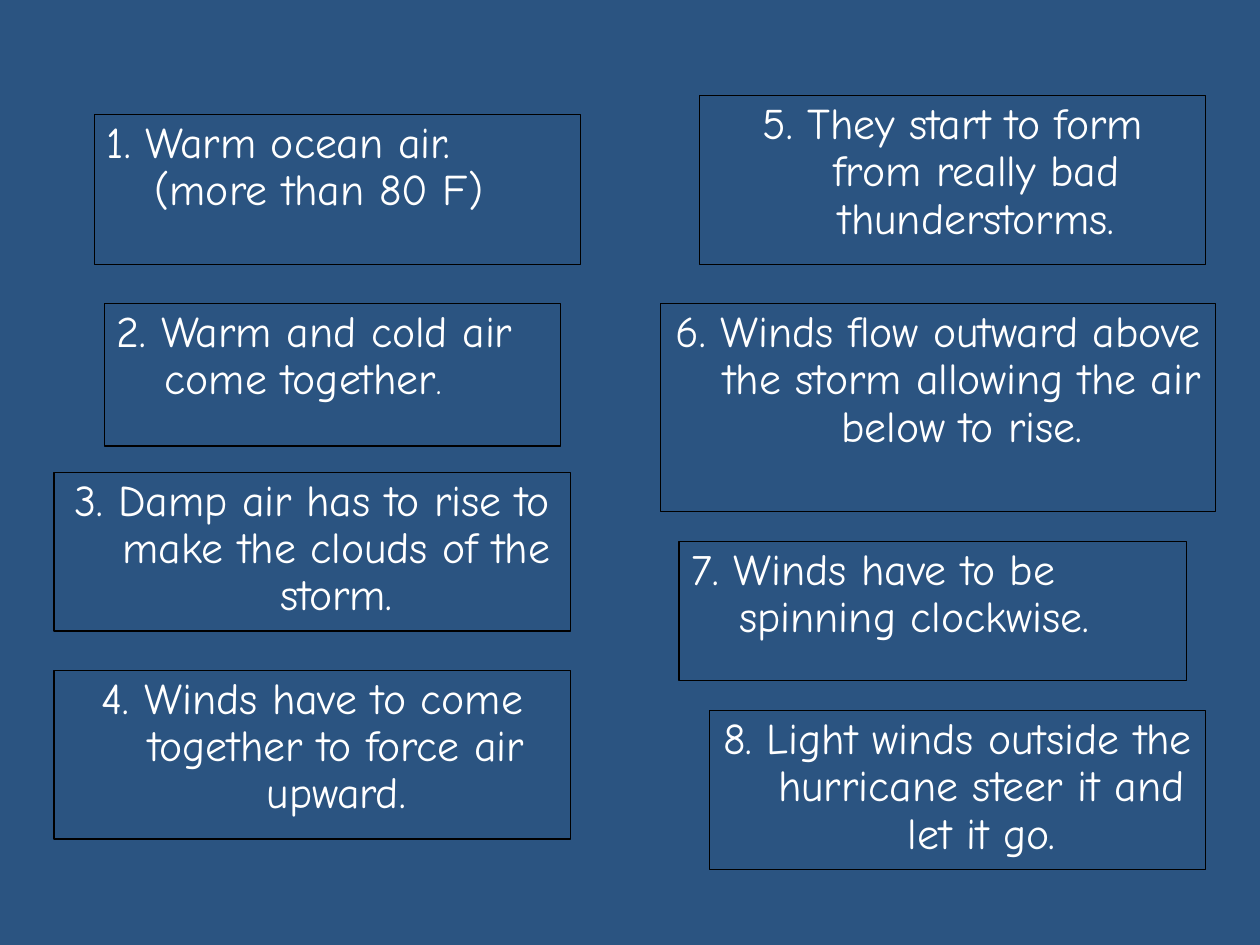
from dataclasses import dataclass

from pptx import Presentation, util as u
from pptx.dml.color import RGBColor
from pptx.enum import shapes, text

WIDTH, HEIGHT = u.Inches(10), u.Inches(7.5)
COLS, ROWS = 100, 75
FONT, SIZE = "Comic Neue", 25
HANG = u.Inches(0.38)
LEFT, CENTER = text.PP_ALIGN.LEFT, text.PP_ALIGN.CENTER


@dataclass
class Fact:
    """A numbered box, placed in grid columns and rows."""
    words: str
    col: float
    row: float
    cols: float
    rows: float
    align: text.PP_ALIGN = CENTER
    small_end: str = ""


FACTS = [
    Fact("Warm ocean air. (more than 80 F)", 7.5, 9.1, 38.6, 11.9, LEFT),
    Fact("Warm and cold air come together", 8.3, 24.1, 36.2, 11.3, LEFT, "."),
    Fact("Damp air has to rise to make the clouds of the storm.", 4.3, 37.5, 41, 12.6),
    Fact("Winds have to come together to force air upward.", 4.3, 53.2, 41, 13.4),
    Fact("They start to form from really bad thunderstorms.", 55.5, 7.6, 40.2, 13.4),
    Fact("Winds flow outward above the storm allowing the air below to rise.",
         52.4, 24.1, 44.1, 16.5),
    Fact("Winds have to be spinning clockwise.", 53.9, 43, 40.3, 11, LEFT),
    Fact("Light winds outside the hurricane steer it and let it go.", 56.3, 56.4, 39.4, 12.6),
]


def rgb(color: str) -> RGBColor:
    return RGBColor.from_string(color)


def add_run(p, words: str, *, size: float = SIZE, color: str = "FFFFFF") -> None:
    r = p.add_run()
    r.text = words
    r.font.name, r.font.size = FONT, u.Pt(size)
    r.font.color.rgb = rgb(color)


def draw_fact(s, number: int, fact: Fact) -> None:
    sp = s.shapes.add_shape(
        shapes.MSO_SHAPE.RECTANGLE,
        round(WIDTH * fact.col / COLS), round(HEIGHT * fact.row / ROWS),
        round(WIDTH * fact.cols / COLS), round(HEIGHT * fact.rows / ROWS))
    sp.shadow.inherit = False
    sp.fill.background()
    sp.line.color.rgb = rgb("000000")
    sp.line.width = u.Pt(0.75)
    tf = sp.text_frame
    tf.word_wrap = True
    tf.vertical_anchor = text.MSO_ANCHOR.TOP
    p = tf.paragraphs[0]
    p.alignment, p.line_spacing = fact.align, 0.9
    ppr = p._p.get_or_add_pPr()
    ppr.set("marL", str(HANG))
    ppr.set("indent", str(-HANG))
    add_run(p, f"{number}. {fact.words}")
    if fact.small_end:
        add_run(p, fact.small_end, size=20)


def main() -> None:
    prs = Presentation()
    prs.slide_width, prs.slide_height = WIDTH, HEIGHT
    s = prs.slides.add_slide(prs.slide_layouts[6])
    s.background.fill.solid()
    s.background.fill.fore_color.rgb = rgb("2B5481")
    for number, fact in enumerate(FACTS, 1):
        draw_fact(s, number, fact)
    prs.save("out.pptx")


if __name__ == "__main__":
    main()
